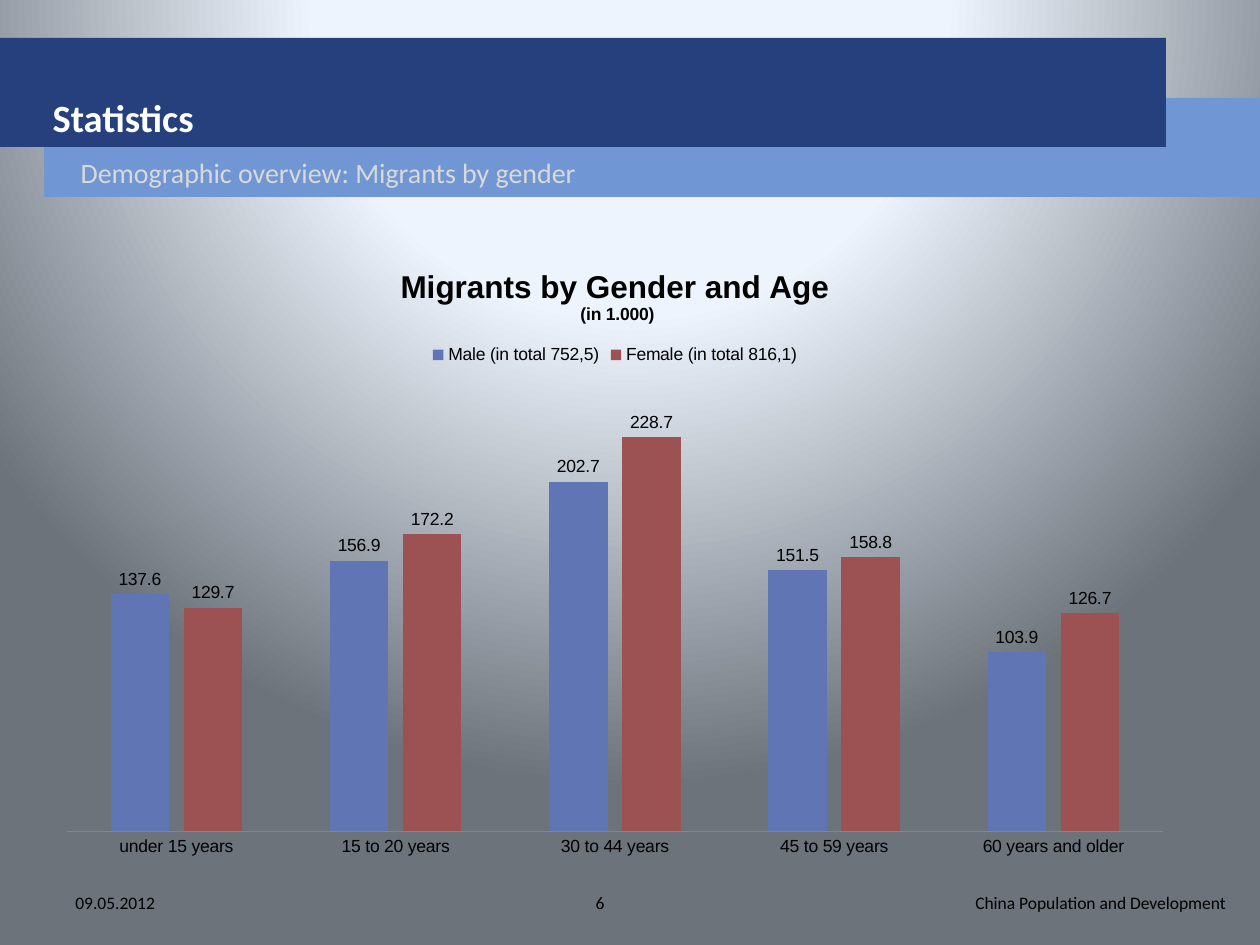
from lxml.etree import SubElement
from pptx import Presentation
from pptx.chart.data import CategoryChartData
from pptx.dml.color import RGBColor
from pptx.enum.chart import XL_CHART_TYPE, XL_LABEL_POSITION, XL_LEGEND_POSITION, XL_TICK_MARK
from pptx.enum.shapes import MSO_SHAPE
from pptx.enum.text import MSO_ANCHOR, MSO_AUTO_SIZE, PP_ALIGN
from pptx.oxml import parse_xml
from pptx.oxml.ns import nsdecls, qn
from pptx.util import Pt

COLORS = {
    "navy": "26407E", "sky": "7097D3", "white": "FFFFFF", "pale": "D9D9D9",
    "black": "000000", "male": "6076B4", "female": "9C5252", "axis": "868686",
}
BACKGROUND_STOPS = [(0, "F0F6FE"), (40, "EDF4FD"), (100, "6D737B")]
AGE_GROUPS = ["under 15 years", "15 to 20 years", "30 to 44 years",
              "45 to 59 years", "60 years and older"]
MIGRANTS = [
    ("Male (in total 752,5)", "male", [137.6, 156.9, 202.7, 151.5, 103.9]),
    ("Female (in total 816,1)", "female", [129.7, 172.2, 228.7, 158.8, 126.7]),
]


def px(length):
    return round(length * 914400 / 126)


def color(name):
    return RGBColor.from_string(COLORS[name])


class SlideBuilder:
    text_font = "Calibri"
    chart_font = "Arial"

    def __init__(self, page):
        self.page = page

    def background(self, stops):
        """Circular gradient centred above the top edge."""
        marks = "".join(f'<a:gs pos="{pos * 1000}"><a:srgbClr val="{rgb}"/></a:gs>'
                        for pos, rgb in stops)
        self.page.element.cSld.insert(0, parse_xml(
            f'<p:bg {nsdecls("p", "a")}><p:bgPr><a:gradFill rotWithShape="1">'
            f'<a:gsLst>{marks}</a:gsLst><a:path path="circle">'
            '<a:fillToRect l="50000" t="-80000" r="50000" b="180000"/></a:path>'
            '</a:gradFill><a:effectLst/></p:bgPr></p:bg>'))

    def banner(self, left, top, width, height, fill):
        """Filled bar placed behind the title."""
        box = self.page.shapes.add_shape(
            MSO_SHAPE.RECTANGLE, px(left), px(top), px(width), px(height))
        box.shadow.inherit = False
        box.fill.solid()
        box.fill.fore_color.rgb = color(fill)
        box.line.fill.background()
        self.page.shapes.title.element.addprevious(box.element)

    def set_text(self, box, text, size, ink, anchor, align=PP_ALIGN.LEFT, bold=False):
        frame = box.text_frame
        frame.word_wrap = True
        frame.auto_size = MSO_AUTO_SIZE.NONE
        frame.vertical_anchor = anchor
        para = frame.paragraphs[0]
        para.text = text
        para.alignment = align
        self.style(para.font, self.text_font, size, ink, bold)
        return para

    def style(self, font, name, size, ink="black", bold=False):
        font.name, font.size, font.bold = name, Pt(size), bold
        font.color.rgb = color(ink)

    def placeholder(self, box, place, text, size, ink, anchor, margin, indent=0, bold=False):
        box.left, box.top, box.width, box.height = map(px, place)
        para = self.set_text(box, text, size, ink, anchor, bold=bold)
        properties = para._p.get_or_add_pPr()
        properties.set("marL", str(px(margin)))
        properties.set("indent", str(px(indent)))
        properties.insert(0, SubElement(properties, qn("a:buNone")))

    def footer(self, left, text, align):
        box = self.page.shapes.add_textbox(px(left), px(878), px(294), px(50))
        self.set_text(box, text, 10, "black", MSO_ANCHOR.MIDDLE, align)

    def column_chart(self, left, top, width, height, title_lines, categories, rows):
        data = CategoryChartData(number_format="0.0")
        data.categories = categories
        for name, _, values in rows:
            data.add_series(name, values)
        chart = self.page.shapes.add_chart(
            XL_CHART_TYPE.COLUMN_CLUSTERED, px(left), px(top), px(width), px(height), data).chart
        self.style(chart.font, self.chart_font, 10)

        frame = chart.chart_title.text_frame
        for index, (text, size) in enumerate(title_lines):
            para = frame.add_paragraph() if index else frame.paragraphs[0]
            para.text = text
            self.style(para.font, self.chart_font, size, bold=True)
        chart.chart_title.include_in_layout = False

        chart.has_legend = True
        chart.legend.position = XL_LEGEND_POSITION.TOP
        chart.legend.include_in_layout = False

        axis = chart.category_axis
        axis.major_tick_mark = axis.minor_tick_mark = XL_TICK_MARK.NONE
        axis.format.line.color.rgb = color("axis")
        chart.value_axis.visible = False
        chart.value_axis.has_major_gridlines = False
        chart.value_axis.minimum_scale = 0
        chart.value_axis.maximum_scale = 250

        plot = chart.plots[0]
        plot.vary_by_categories = False
        plot.gap_width, plot.overlap = 150, -25
        for series, (_, fill, _) in zip(plot.series, rows):
            series.format.fill.solid()
            series.format.fill.fore_color.rgb = color(fill)
            labels = series.data_labels
            labels.show_value = True
            labels.position = XL_LABEL_POSITION.OUTSIDE_END
        self.place_plot(chart, x=0.02, y=0.25, w=0.96, h=0.69)

    def place_plot(self, chart, **fractions):
        """Fix the inner plot area as fractions of the chart."""
        area = chart._chartSpace.chart.plotArea
        for old in area.findall(qn("c:layout")):
            area.remove(old)
        sizes = "".join(f'<c:{key} val="{value}"/>' for key, value in fractions.items())
        area.insert(0, parse_xml(
            f'<c:layout {nsdecls("c")}><c:manualLayout><c:layoutTarget val="inner"/>'
            f'<c:xMode val="edge"/><c:yMode val="edge"/>{sizes}</c:manualLayout></c:layout>'))


def main():
    deck = Presentation()
    deck.slide_width, deck.slide_height = px(1260), px(945)
    page = deck.slides.add_slide(deck.slide_layouts[1])
    builder = SlideBuilder(page)
    builder.background(BACKGROUND_STOPS)
    builder.banner(44, 98, 1216, 99, "sky")
    builder.banner(0, 38, 1166, 109, "navy")
    builder.footer(944, "China Population and Development", PP_ALIGN.RIGHT)
    builder.footer(453, "6", PP_ALIGN.CENTER)
    builder.footer(63, "09.05.2012", PP_ALIGN.LEFT)
    builder.placeholder(page.shapes.title, (16, 38, 1110, 109), "Statistics", 22, "white",
                        MSO_ANCHOR.BOTTOM, margin=24, bold=True)
    builder.placeholder(page.placeholders[1], (44, 147, 1132, 50),
                        "Demographic overview: Migrants by gender", 16, "pale",
                        MSO_ANCHOR.MIDDLE, margin=48, indent=-24)
    builder.column_chart(44, 244, 1142, 625,
                         [("Migrants by Gender and Age", 18), (" (in 1.000)", 10)],
                         AGE_GROUPS, MIGRANTS)
    deck.save("out.pptx")


if __name__ == "__main__":
    main()
